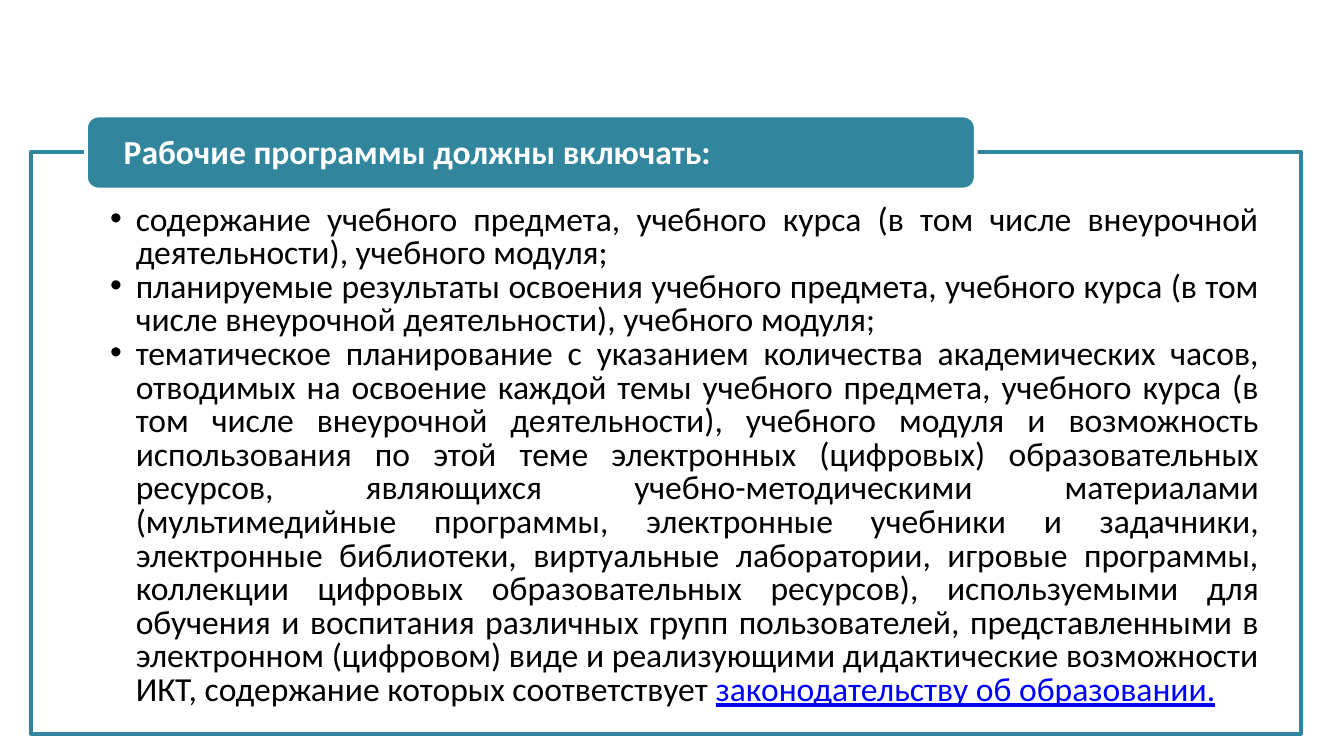
from lxml import etree
from pptx import Presentation
from pptx.dml.color import RGBColor
from pptx.enum.shapes import MSO_SHAPE
from pptx.enum.text import MSO_ANCHOR, MSO_AUTO_SIZE, PP_ALIGN
from pptx.oxml.ns import qn
from pptx.util import Inches, Pt

COLORS = {"teal": "31859C", "white": "FFFFFF", "black": "000000", "link": "0000FF"}

ITEMS = [
    "содержание учебного предмета, учебного курса (в том числе внеурочной "
    "деятельности), учебного модуля;",
    "планируемые результаты освоения учебного предмета, учебного курса (в том "
    "числе внеурочной деятельности), учебного модуля;",
    "тематическое планирование с указанием количества академических часов, "
    "отводимых на освоение каждой темы учебного предмета, учебного курса (в том "
    "числе внеурочной деятельности), учебного модуля и возможность использования "
    "по этой теме электронных (цифровых) образовательных ресурсов, являющихся "
    "учебно-методическими материалами (мультимедийные программы, электронные "
    "учебники и задачники, электронные библиотеки, виртуальные лаборатории, "
    "игровые программы, коллекции цифровых образовательных ресурсов), "
    "используемыми для обучения и воспитания различных групп пользователей, "
    "представленными в электронном (цифровом) виде и реализующими дидактические "
    "возможности ИКТ, содержание которых соответствует ",
]
LAW = "законодательству об образовании."


def add_run(p, text, color="black", bold=False, underline=False):
    r = p.add_run()
    r.text = text
    r.font.name, r.font.size = "Calibri", Pt(18)
    r.font.bold, r.font.underline = bold, underline
    r.font.color.rgb = RGBColor.from_string(COLORS[color])


def place(sp, box, insets, anchor):
    sp.left, sp.top, sp.width, sp.height = [Inches(v) for v in box]
    tf = sp.text_frame
    tf.word_wrap, tf.auto_size = True, MSO_AUTO_SIZE.NONE
    tf.vertical_anchor = anchor
    (tf.margin_left, tf.margin_top,
     tf.margin_right, tf.margin_bottom) = [Inches(v) for v in insets]
    return tf


# 16:9 slide
prs = Presentation()
prs.slide_width, prs.slide_height = Inches(10), Inches(10 * 9 / 16)
s = prs.slides.add_slide(prs.slide_layouts[1])
title, body = s.placeholders[0], s.placeholders[1]

# Frame and header tab
frame_box = (0.23, 1.13, 9.45, 4.33)
tab_box = (0.64, 0.86, 6.62, 0.55)
for kind, box, fill, line in [
    (MSO_SHAPE.RECTANGLE, frame_box, "white", "teal"),
    (MSO_SHAPE.ROUNDED_RECTANGLE, tab_box, "teal", "white"),
]:
    sp = s.shapes.add_shape(kind, *[Inches(v) for v in box])
    sp.shadow.inherit = False
    sp.fill.solid()
    sp.fill.fore_color.rgb = RGBColor.from_string(COLORS[fill])
    sp.line.color.rgb = RGBColor.from_string(COLORS[line])
    sp.line.width = Pt(2)
    if kind == MSO_SHAPE.RECTANGLE:
        clr = sp._element.spPr.find(qn("a:solidFill"))[0]
        etree.SubElement(clr, qn("a:alpha"), val="90000")

# Placeholders go in front of the shapes
for sp in (body, title):
    s.shapes._spTree.append(sp._element)

# List
tf = place(body, frame_box, (0.59, 0.39, 0.31, 0.14), MSO_ANCHOR.TOP)
for i, item in enumerate(ITEMS):
    p = tf.paragraphs[0] if i == 0 else tf.add_paragraph()
    p.level = 1
    p.alignment = PP_ALIGN.JUSTIFY
    p.line_spacing = Pt(18)
    p.space_before = p.space_after = Pt(0)
    pPr = p._p.get_or_add_pPr()
    pPr.set("marL", str(Inches(0.19)))
    pPr.set("indent", str(-Inches(0.19)))
    etree.SubElement(pPr, qn("a:buChar"), char="•")
    add_run(p, item)
add_run(p, LAW, color="link", underline=True)

# Heading
tf = place(title, (0.67, 0.89, 6.56, 0.5), (0.25, 0, 0.25, 0), MSO_ANCHOR.MIDDLE)
p = tf.paragraphs[0]
p.alignment = PP_ALIGN.LEFT
p.line_spacing = 0.9
add_run(p, "Рабочие программы должны включать:", color="white", bold=True)

prs.save("out.pptx")
